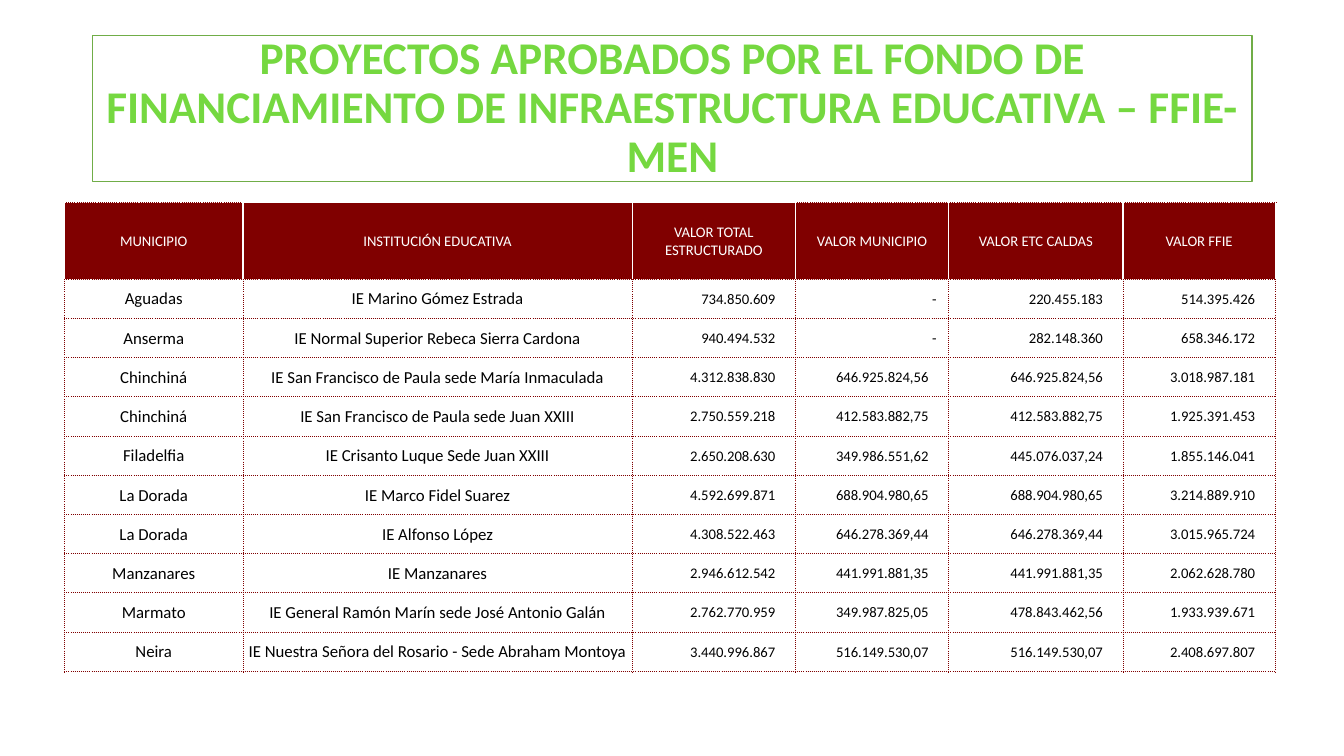
import pptx
import pptx.dml.color
import pptx.enum.dml
import pptx.enum.shapes
import pptx.enum.text
import pptx.oxml
import pptx.oxml.ns
import pptx.util

ALIGN = pptx.enum.text.PP_ALIGN
MIDDLE = pptx.enum.text.MSO_ANCHOR.MIDDLE
WIDTH, HEIGHT = pptx.util.Inches(13.333), pptx.util.Inches(7.5)
FONT = "Calibri"
MAROON, WHITE, BLACK = "800000", "FFFFFF", "000000"
LEAF, GREEN = "75D840", "70AD47"

TITLE = ("PROYECTOS APROBADOS POR EL FONDO DE FINANCIAMIENTO DE "
         "INFRAESTRUCTURA EDUCATIVA – FFIE- MEN")
HEADERS = ["MUNICIPIO", "INSTITUCIÓN EDUCATIVA", "VALOR TOTAL ESTRUCTURADO",
           "VALOR MUNICIPIO", "VALOR ETC CALDAS", "VALOR FFIE"]
PROJECTS = [
    ["Aguadas", "IE Marino Gómez Estrada",
     "734.850.609", "-", "220.455.183", "514.395.426"],
    ["Anserma", "IE Normal Superior Rebeca Sierra Cardona",
     "940.494.532", "-", "282.148.360", "658.346.172"],
    ["Chinchiná", "IE San Francisco de Paula sede María Inmaculada",
     "4.312.838.830", "646.925.824,56", "646.925.824,56", "3.018.987.181"],
    ["Chinchiná", "IE San Francisco de Paula sede Juan XXIII",
     "2.750.559.218", "412.583.882,75", "412.583.882,75", "1.925.391.453"],
    ["Filadelfia", "IE Crisanto Luque Sede Juan XXIII",
     "2.650.208.630", "349.986.551,62", "445.076.037,24", "1.855.146.041"],
    ["La Dorada", "IE Marco Fidel Suarez",
     "4.592.699.871", "688.904.980,65", "688.904.980,65", "3.214.889.910"],
    ["La Dorada", "IE Alfonso López",
     "4.308.522.463", "646.278.369,44", "646.278.369,44", "3.015.965.724"],
    ["Manzanares", "IE Manzanares",
     "2.946.612.542", "441.991.881,35", "441.991.881,35", "2.062.628.780"],
    ["Marmato", "IE General Ramón Marín sede José Antonio Galán",
     "2.762.770.959", "349.987.825,05", "478.843.462,56", "1.933.939.671"],
    ["Neira", "IE Nuestra Señora del Rosario - Sede Abraham Montoya",
     "3.440.996.867", "516.149.530,07", "516.149.530,07", "2.408.697.807"],
]
# Shares of the slide, in percent
COLUMN_SHARES = [13.28, 28.96, 12.15, 11.4, 12.98, 11.33]
HEADER_SHARE, ROW_SHARE = 10.13, 5.19


def across(share):
    return round(WIDTH * share / 100)


def down(share):
    return round(HEIGHT * share / 100)


def color(hex_string):
    return pptx.dml.color.RGBColor.from_string(hex_string)


def write(tf, text, size, hex_string, align=ALIGN.CENTER, bold=False):
    p = tf.paragraphs[0]
    p.alignment = align
    r = p.add_run()
    r.text = text
    r.font.name = FONT
    r.font.size = pptx.util.Pt(size)
    r.font.bold = bold
    r.font.color.rgb = color(hex_string)
    return p


def add_title(s):
    sp = s.shapes.add_shape(pptx.enum.shapes.MSO_SHAPE.RECTANGLE,
                            across(6.9), down(4.67), across(86.25), down(19.33))
    sp.shadow.inherit = False
    sp.fill.solid()
    sp.fill.fore_color.rgb = color(WHITE)
    sp.line.color.rgb = color(GREEN)
    sp.line.width = pptx.util.Pt(1)
    tf = sp.text_frame
    tf.word_wrap = True
    tf.vertical_anchor = MIDDLE
    write(tf, TITLE, 32.4, LEAF, bold=True).line_spacing = 0.9


def set_border(cell, side, hex_string, points, dash):
    ln = pptx.oxml.parse_xml(
        f'<a:ln{side} {pptx.oxml.ns.nsdecls("a")} w="{pptx.util.Pt(points)}">'
        f'<a:solidFill><a:srgbClr val="{hex_string}"/></a:solidFill>'
        f'<a:prstDash val="{dash}"/></a:ln{side}>')
    cell._tc.get_or_add_tcPr().append(ln)


def style_cell(cell, white_sides=""):
    cell.vertical_anchor = MIDDLE
    cell.margin_left = cell.margin_right = pptx.util.Inches(0.01)
    cell.margin_top = pptx.util.Inches(0.01)
    cell.margin_bottom = 0
    for side in "LRTB":
        if side in white_sides:
            set_border(cell, side, WHITE, 1, "solid")
        else:
            set_border(cell, side, MAROON, 0.5, "sysDot")


def fill_header(cell, col, text):
    style_cell(cell, "LRT" if col in (1, 2) else "LR")
    cell.fill.solid()
    cell.fill.fore_color.rgb = color(MAROON)
    write(cell.text_frame, text, 10.5, WHITE)


def fill_body(cell, col, text):
    style_cell(cell)
    cell.fill.background()
    if col < 2:
        write(cell.text_frame, text, 12, BLACK)
    else:
        # Amounts line up on the right; a dash stands a little further out
        cell.margin_right = pptx.util.Inches(0.12 if text == "-" else 0.2)
        write(cell.text_frame, text, 10.5, BLACK, ALIGN.RIGHT)


def add_projects(s):
    rows = len(PROJECTS) + 1
    table = s.shapes.add_table(
        rows, len(HEADERS), across(4.8), down(26.8), across(sum(COLUMN_SHARES)),
        down(HEADER_SHARE + ROW_SHARE * len(PROJECTS))).table
    table.horz_banding = False
    for column, share in zip(table.columns, COLUMN_SHARES):
        column.width = across(share)
    for i, row in enumerate(table.rows):
        row.height = down(ROW_SHARE if i else HEADER_SHARE)
    for col, text in enumerate(HEADERS):
        fill_header(table.cell(0, col), col, text)
    for i, project in enumerate(PROJECTS, start=1):
        for col, text in enumerate(project):
            fill_body(table.cell(i, col), col, text)


def main():
    prs = pptx.Presentation()
    prs.slide_width, prs.slide_height = WIDTH, HEIGHT
    s = prs.slides.add_slide(prs.slide_layouts[6])
    add_title(s)
    add_projects(s)
    prs.save("out.pptx")


if __name__ == "__main__":
    main()
